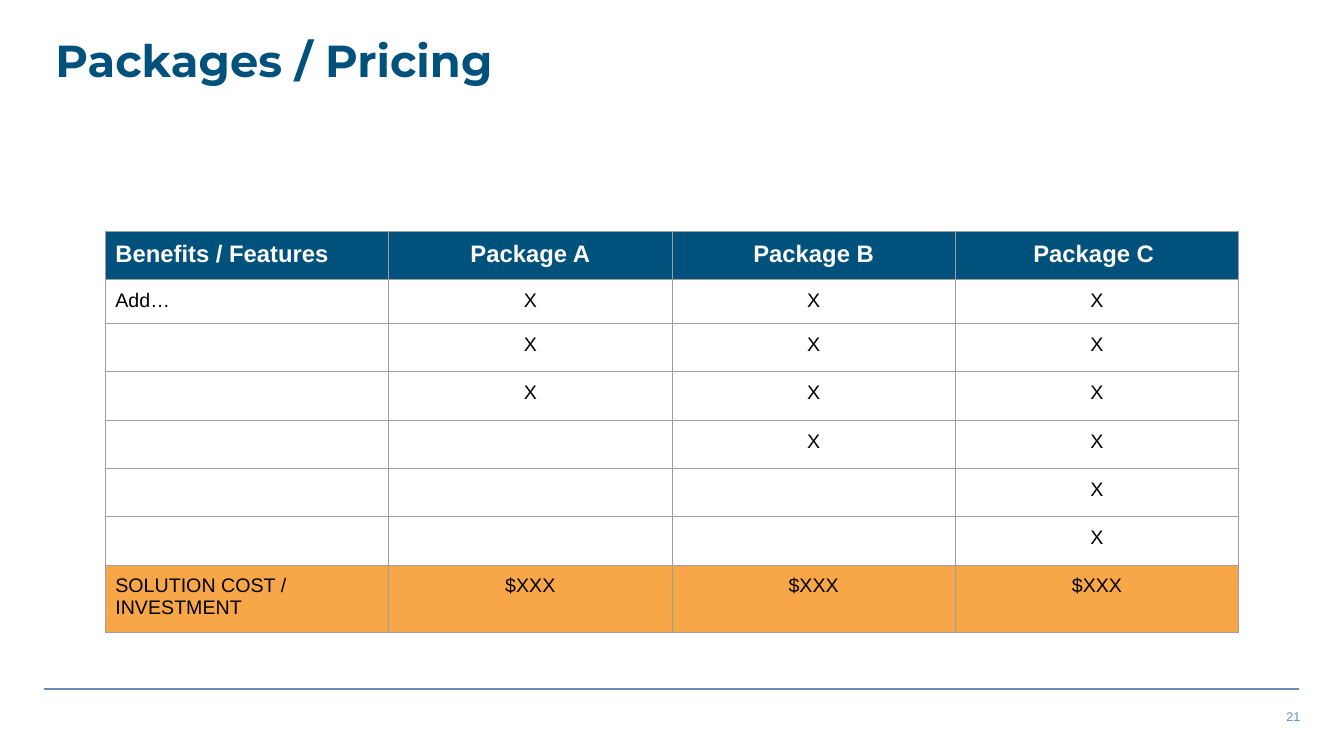
from lxml import etree
from pptx import Presentation
from pptx.dml.color import RGBColor
from pptx.enum import shapes, text
from pptx.oxml.ns import qn
from pptx.util import Pt

TITLE = "Packages / Pricing"
PAGE = "21"
ROWS = [
    ("Benefits / Features", "Package A", "Package B", "Package C "),
    ("Add…", "X", "X", "X"),
    ("", "X", "X", "X"),
    ("", "X", "X", "X"),
    ("", "", "X", "X"),
    ("", "", "", "X"),
    ("", "", "", "X"),
    ("SOLUTION COST / INVESTMENT", "$XXX", "$XXX", "$XXX"),
]
COLORS = {"navy": "00517C", "orange": "F7A747", "rule": "668EB9",
          "grid": "9E9E9E", "white": "FFFFFF", "black": "000000"}
HEADER = {"size": Pt(17), "bold": True, "name": "Arial"}
BODY = {"size": Pt(14), "bold": False, "name": "Arial"}
HEIGHTS = [32.8, 30.7] + [34.5] * 5 + [45.8]
COL_WIDTH = 202.4
ALIGN = text.PP_ALIGN
ANCHOR = text.MSO_ANCHOR


def rgb(name):
    return RGBColor.from_string(COLORS[name])


def style(font, color, formats):
    for key, value in formats.items():
        setattr(font, key, value)
    font.color.rgb = rgb(color)


def add_borders(cell):
    tc_pr = cell._tc.get_or_add_tcPr()
    for i, side in enumerate(("lnL", "lnR", "lnT", "lnB")):
        ln = etree.Element(qn("a:" + side), w=str(Pt(0.75)))
        fill = etree.SubElement(ln, qn("a:solidFill"))
        etree.SubElement(fill, qn("a:srgbClr"), val=COLORS["grid"])
        tc_pr.insert(i, ln)


def add_title(s):
    sp = s.shapes.title
    sp.left, sp.top, sp.width, sp.height = Pt(32.4), Pt(23.8), Pt(700.6), Pt(54.7)
    tf = sp.text_frame
    tf.text = TITLE
    tf.vertical_anchor = ANCHOR.TOP
    p = tf.paragraphs[0]
    p.alignment = ALIGN.LEFT
    p.line_spacing = 0.9
    style(p.runs[0].font, "navy", {"size": Pt(32), "bold": True, "name": "Montserrat"})


def add_footer(s):
    line = s.shapes.add_connector(shapes.MSO_CONNECTOR.STRAIGHT,
                                  Pt(31.7), Pt(492.2), Pt(928.2), Pt(492.2))
    line.line.color.rgb = rgb("rule")
    line.line.width = Pt(1)
    etree.SubElement(line._element.spPr, qn("a:effectLst"))
    tf = s.shapes.add_textbox(Pt(552.2), Pt(502.6), Pt(383.8), Pt(18)).text_frame
    tf.word_wrap = True
    tf.vertical_anchor = ANCHOR.MIDDLE
    p = tf.paragraphs[0]
    p.alignment = ALIGN.RIGHT
    r = p.add_run()
    r.text = PAGE
    style(r.font, "rule", {"size": Pt(9), "name": "Arial"})


def add_pricing(s):
    table = s.shapes.add_table(len(ROWS), len(ROWS[0]), Pt(75.2), Pt(165),
                               Pt(COL_WIDTH * len(ROWS[0])), Pt(sum(HEIGHTS))).table
    table.horz_banding = False
    for col in table.columns:
        col.width = Pt(COL_WIDTH)
    fills = {0: "navy", len(ROWS) - 1: "orange"}
    for i, values in enumerate(ROWS):
        table.rows[i].height = Pt(HEIGHTS[i])
        for j, value in enumerate(values):
            cell = table.cell(i, j)
            for side in ("left", "right", "top", "bottom"):
                setattr(cell, "margin_" + side, Pt(7.2))
            if i in fills:
                cell.fill.solid()
                cell.fill.fore_color.rgb = rgb(fills[i])
            else:
                cell.fill.background()
            add_borders(cell)
            p = cell.text_frame.paragraphs[0]
            p.alignment = ALIGN.CENTER if j else ALIGN.LEFT
            font = p.font
            if value:
                r = p.add_run()
                r.text = value
                font = r.font
            style(font, "black" if i else "white", BODY if i else HEADER)


def main():
    prs = Presentation()
    prs.slide_width, prs.slide_height = Pt(960), Pt(540)
    s = prs.slides.add_slide(prs.slide_layouts[5])
    add_footer(s)
    add_title(s)
    add_pricing(s)
    prs.save("out.pptx")


if __name__ == "__main__":
    main()
